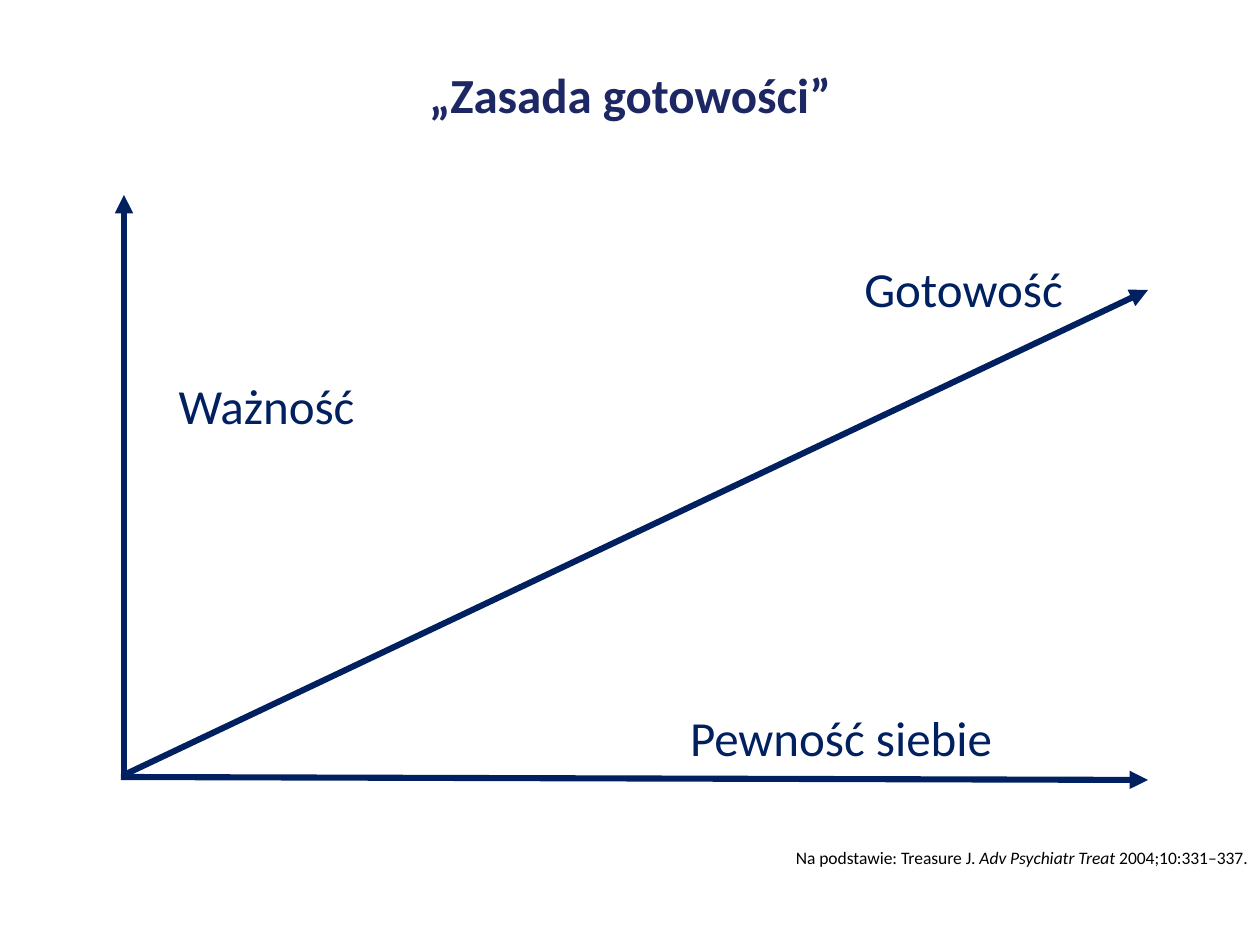
import pptx
import pptx.dml.color
import pptx.enum.shapes
import pptx.enum.text
import pptx.oxml.ns
import pptx.util
from lxml import etree

PX = 914400 / 126
WIDTH, HEIGHT = 1260, 945

TITLE_BLUE = pptx.dml.color.RGBColor(0x1D, 0x27, 0x63)
NAVY = pptx.dml.color.RGBColor(0x00, 0x20, 0x60)
BLACK = pptx.dml.color.RGBColor(0x00, 0x00, 0x00)

ALIGN = pptx.enum.text.PP_ALIGN
TITLE_FORMAT = {"name": "Calibri", "size": pptx.util.Pt(28), "bold": True}
LABEL_FORMAT = {"name": "Calibri", "size": pptx.util.Pt(28)}
SOURCE_FORMAT = {"name": "Calibri", "size": pptx.util.Pt(10)}

# Each arrow runs from the origin of the graph to its tip
ARROWS = [
    ((126, 774), (1148, 290)),
    ((121, 777), (1148, 780)),
    ((124, 777), (124, 195)),
]
LABELS = [
    ("Ważność", (112, 369, 309, 72)),
    ("Pewność siebie", (672, 701, 338, 72)),
    ("Gotowość", (809, 252, 309, 72)),
]
SOURCE = [
    ("Na podstawie: Treasure\u00a0J.", False),
    (" Adv Psychiatr Treat ", True),
    ("2004;10:331–337.", False),
]


def emu(*lengths):
    return [pptx.util.Emu(round(length * PX)) for length in lengths]


def format_font(font, values, color):
    for key, value in values.items():
        setattr(font, key, value)
    font.color.rgb = color


def fill_text(frame, parts, align, values, color):
    frame.word_wrap = True
    paragraph = frame.paragraphs[0]
    paragraph.alignment = align
    for words, italic in parts:
        run = paragraph.add_run()
        run.text = words
        format_font(run.font, values, color)
        if italic:
            run.font.italic = True


def add_title(slide, words, box):
    title = slide.shapes.title
    title.left, title.top, title.width, title.height = emu(*box)
    title.text_frame.vertical_anchor = pptx.enum.text.MSO_ANCHOR.MIDDLE
    fill_text(title.text_frame, [(words, False)], ALIGN.CENTER, TITLE_FORMAT, TITLE_BLUE)


def add_text(slide, parts, box, align, values, color):
    frame = slide.shapes.add_textbox(*emu(*box)).text_frame
    fill_text(frame, parts, align, values, color)
    frame.auto_size = pptx.enum.text.MSO_AUTO_SIZE.SHAPE_TO_FIT_TEXT


def add_arrow(slide, origin, tip):
    arrow = slide.shapes.add_connector(
        pptx.enum.shapes.MSO_CONNECTOR.STRAIGHT, *emu(*origin, *tip))
    arrow.line.color.rgb = NAVY
    arrow.line.width = pptx.util.Pt(3.5)
    qn = pptx.oxml.ns.qn
    properties = arrow.line._get_or_add_ln()
    etree.SubElement(properties, qn("a:tailEnd"), type="triangle")
    etree.SubElement(arrow._element.spPr, qn("a:effectLst"))


def main():
    deck = pptx.Presentation()
    deck.slide_width, deck.slide_height = emu(WIDTH, HEIGHT)
    slide = deck.slides.add_slide(deck.slide_layouts.get_by_name("Title Only"))

    add_title(slide, "„Zasada gotowości”", (63, 40, 1134, 107))

    # Axes and the readiness line
    for origin, tip in ARROWS:
        add_arrow(slide, origin, tip)

    # Names of the three arrows
    for words, box in LABELS:
        add_text(slide, [(words, False)], box, ALIGN.CENTER, LABEL_FORMAT, NAVY)

    # Source reference
    add_text(slide, SOURCE, (767, 841, 493, 34), ALIGN.RIGHT, SOURCE_FORMAT, BLACK)

    deck.save("out.pptx")


if __name__ == "__main__":
    main()
